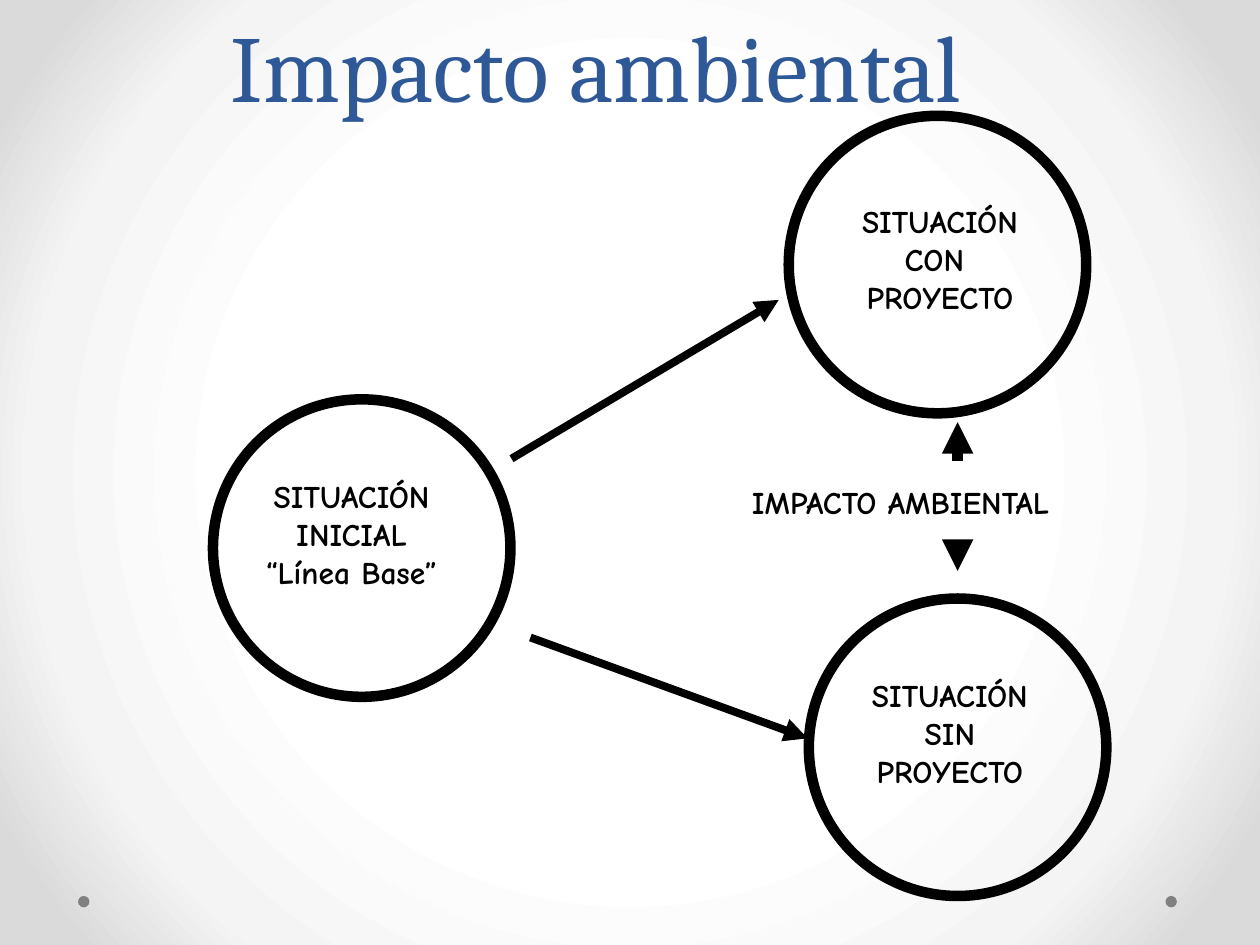
import pptx
import pptx.dml.color
import pptx.enum.shapes
import pptx.enum.text
import pptx.oxml
import pptx.oxml.ns
import pptx.util
from lxml import etree

Pt = pptx.util.Pt
RGBColor = pptx.dml.color.RGBColor
Align = pptx.enum.text.PP_ALIGN
Anchor = pptx.enum.text.MSO_ANCHOR
OVAL = pptx.enum.shapes.MSO_SHAPE.OVAL

BLACK = RGBColor(0x00, 0x00, 0x00)
BLUE = RGBColor(0x2F, 0x58, 0x97)
GRAY = RGBColor(0x80, 0x80, 0x80)
BACKGROUND_STOPS = (
    (50, RGBColor(0xFF, 0xFF, 0xFF)),
    (76, RGBColor(0xF4, 0xF4, 0xF4)),
    (92, RGBColor(0xDA, 0xDA, 0xDA)),
)

DIAMETER = 170
LABEL_SIZE = (129.6, 72)
# Circle corner, label offset inside the circle, label lines
SITUATIONS = (
    ((121.7, 228.2), (14.4, 41), ("SITUACIÓN", "INICIAL", "“Línea Base”")),
    ((450.7, 66.2), (21.6, 46), ("SITUACIÓN", "CON ", "PROYECTO")),
    ((462.2, 342), (15.8, 41), ("SITUACIÓN", "SIN", "PROYECTO")),
)


def add_text(shapes, box, lines, font="Comic Neue", size=18, color=BLACK, bold=True,
             align=Align.CENTER, anchor=Anchor.TOP, line_spacing=None, wrap=True):
    frame = shapes.add_textbox(*map(Pt, box)).text_frame
    frame.word_wrap = wrap
    frame.vertical_anchor = anchor
    for index, line in enumerate(lines):
        paragraph = frame.add_paragraph() if index else frame.paragraphs[0]
        paragraph.alignment = align
        if line_spacing:
            paragraph.line_spacing = Pt(line_spacing)
        run = paragraph.add_run()
        run.text = line
        run.font.name = font
        run.font.size = Pt(size)
        run.font.bold = bold
        run.font.color.rgb = color


def add_circle(shapes, left, top, diameter, fill=None, line_width=None):
    circle = shapes.add_shape(OVAL, Pt(left), Pt(top), Pt(diameter), Pt(diameter))
    circle.shadow.inherit = False
    if fill is None:
        circle.fill.background()
    else:
        circle.fill.solid()
        circle.fill.fore_color.rgb = fill
    if line_width is None:
        circle.line.fill.background()
    else:
        circle.line.color.rgb = BLACK
        circle.line.width = Pt(line_width)


def add_arrow(shapes, start, end, width):
    """Draw a line whose arrowhead is at its end point."""
    arrow = shapes.add_connector(pptx.enum.shapes.MSO_CONNECTOR.STRAIGHT,
                                 *map(Pt, (*start, *end)))
    arrow.line.color.rgb = BLACK
    arrow.line.width = Pt(width)
    qn = pptx.oxml.ns.qn
    etree.SubElement(arrow.line._get_or_add_ln(), qn("a:tailEnd"), type="triangle")
    etree.SubElement(arrow._element.spPr, qn("a:effectLst"))


def set_background(slide):
    """Fill the background with a gradient that runs outwards from the centre."""
    stops = "".join(
        f'<a:gs pos="{position * 1000}"><a:srgbClr val="{color}"/></a:gs>'
        for position, color in BACKGROUND_STOPS)
    background = pptx.oxml.parse_xml(
        f'<p:bg {pptx.oxml.ns.nsdecls("p", "a")}><p:bgPr><a:gradFill rotWithShape="1">'
        f'<a:gsLst>{stops}</a:gsLst><a:path path="circle">'
        '<a:fillToRect l="50000" t="50000" r="50000" b="50000"/></a:path></a:gradFill>'
        '<a:effectLst/></p:bgPr></p:bg>')
    slide._element.cSld.insert(0, background)


def add_corner_dots(slide):
    for left in (666, 44.6):
        add_circle(slide.shapes, left, 512, 6.5, fill=GRAY)


def add_title(slide, box):
    add_text(slide.shapes, box, ["Impacto ambiental"], font="Cambria", size=54,
             color=BLUE, bold=False, anchor=Anchor.BOTTOM, line_spacing=58)


def add_situation(slide, corner, label_offset, lines):
    """Group a circle with its label."""
    shapes = slide.shapes.add_group_shape().shapes
    left, top = corner
    add_circle(shapes, left, top, DIAMETER, line_width=6)
    label_box = (left + label_offset[0], top + label_offset[1], *LABEL_SIZE)
    add_text(shapes, label_box, lines, wrap=False)


def add_impact(slide, box):
    """Place the impact label between an arrow up and an arrow down."""
    left, top, width, height = box
    center = left + 124.6
    bottom = top + height
    add_arrow(slide.shapes, (center, top - 8.6), (center, top - 31), 6)
    add_arrow(slide.shapes, (center, bottom + 6.5), (center, bottom + 23), 6)
    add_text(slide.shapes, box, ["IMPACTO AMBIENTAL"], align=Align.LEFT)


def main():
    presentation = pptx.Presentation()
    presentation.slide_width = Pt(720)
    presentation.slide_height = Pt(540)
    slide = presentation.slides.add_slide(presentation.slide_layouts[6])
    set_background(slide)
    add_corner_dots(slide)
    add_title(slide, (16.6, -53.3, 648, 126))
    for situation in SITUATIONS:
        add_situation(slide, *situation)
    add_impact(slide, (422.6, 272.2, 243.4, 31))
    add_arrow(slide.shapes, (292.3, 262.1), (445, 171.4), 4.5)
    add_arrow(slide.shapes, (303.1, 364.3), (461.5, 421.9), 4.5)
    presentation.save("out.pptx")


if __name__ == "__main__":
    main()
